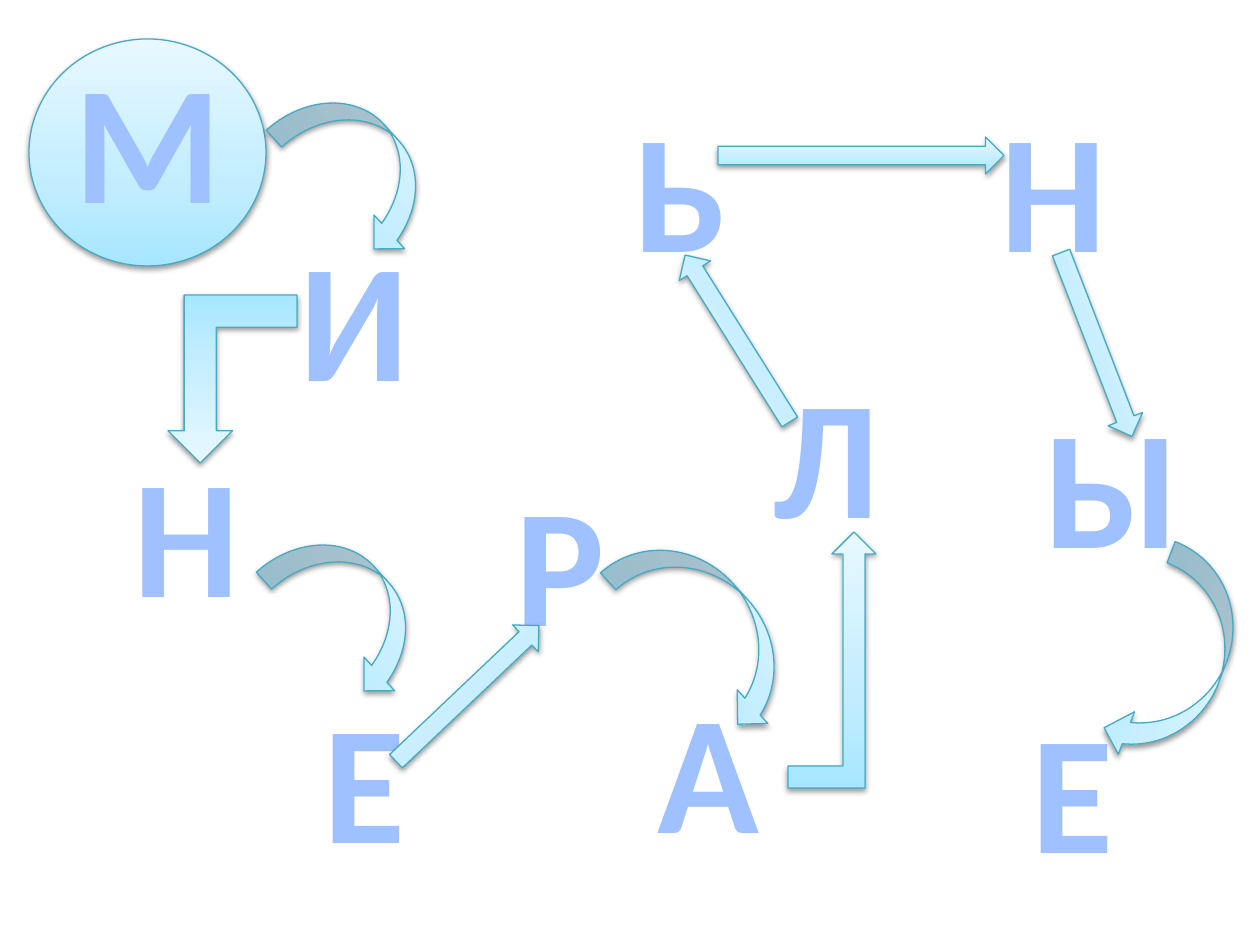
from lxml.etree import SubElement
from pptx import Presentation
from pptx.dml.color import RGBColor
from pptx.enum.shapes import MSO_SHAPE
from pptx.enum.text import MSO_AUTO_SIZE, PP_ALIGN
from pptx.oxml import parse_xml
from pptx.oxml.ns import nsdecls, qn
from pptx.util import Pt

PX = 914400 / 126  # EMU in one px
EDGE = RGBColor(0x46, 0xAA, 0xC5)
LETTER_EDGE = RGBColor(0x46, 0x7A, 0xB8)
PALE = RGBColor(0xBF, 0xD3, 0xF9)
BLUE = RGBColor(0xA0, 0xC1, 0xFF)
NAVY = RGBColor(0x00, 0x3D, 0x85)
AQUA = [(0, RGBColor(0xA7, 0xE6, 0xFF)), (35, RGBColor(0xC1, 0xED, 0xFF)),
        (100, RGBColor(0xE7, 0xF8, 0xFF))]
LETTER_STOPS = [(0, PALE), (9, BLUE), (50, NAVY), (79, BLUE), (100, PALE)]

LETTER_SIZE = (197, 217)
LETTERS = [
    ("М", 49, 29), ("И", 256, 207), ("Н", 88, 423), ("Е", 266, 669),
    ("Р", 462, 452), ("А", 610, 659), ("Л", 728, 344), ("Ь", 581, 78),
    ("Н", 955, 78), ("Ы", 1014, 374), ("Е", 974, 679),
]
CURVED, BENT, STRAIGHT = (MSO_SHAPE.CURVED_DOWN_ARROW, MSO_SHAPE.BENT_UP_ARROW,
                          MSO_SHAPE.RIGHT_ARROW)
CIRCLE = (MSO_SHAPE.OVAL, 29, 39, 237, 227, 0)
ARROWS = [  # kind, left, top, width, height, rotation
    (CURVED, 270, 122, 183, 91, 47.8),
    (CURVED, 260, 564, 183, 91, 47.8),
    (CURVED, 597, 581, 227, 91, 47.8),
    (BENT, 788, 532, 88, 256, 0),
    (BENT, 168, 295, 129, 168, 180),
    (STRAIGHT, 369, 675, 197, 37, 316.5),
    (STRAIGHT, 639, 320, 197, 37, 237.9),
    (STRAIGHT, 718, 137, 286, 37, 0),
    (STRAIGHT, 998, 326, 197, 37, 68.9),
    (CURVED, 1067, 616, 222, 91, 110.9),
]


def gradient(stops, angle):
    """Return a linear gradFill element; stops are (percent, colour)."""
    marks = "".join(f'<a:gs pos="{pos * 1000}"><a:srgbClr val="{colour}"/></a:gs>'
                    for pos, colour in stops)
    return parse_xml(f'<a:gradFill {nsdecls("a")} rotWithShape="1"><a:gsLst>{marks}</a:gsLst>'
                     f'<a:lin ang="{angle * 60000}" scaled="1"/></a:gradFill>')


def add_glossy_shape(slide, kind, left, top, width, height, rotation):
    shape = slide.shapes.add_shape(
        kind, *(round(n * PX) for n in (left, top, width, height)))
    shape.rotation = rotation
    shape.line.color.rgb = EDGE
    shape.line.width = Pt(0.75)
    shape.shadow.inherit = False
    properties = shape._element.spPr
    properties.insert(2, gradient(AQUA, 270))
    shadow = SubElement(properties.find(qn("a:effectLst")), qn("a:outerShdw"),
                        blurRad="40000", dist="20000", dir="5400000", rotWithShape="0")
    shade = SubElement(shadow, qn("a:srgbClr"), val="000000")
    SubElement(shade, qn("a:alpha"), val="38000")


presentation = Presentation()
presentation.slide_width = round(1260 * PX)
presentation.slide_height = round(945 * PX)
slide = presentation.slides.add_slide(presentation.slide_layouts[6])

add_glossy_shape(slide, *CIRCLE)

for letter, left, top in LETTERS:
    box = slide.shapes.add_textbox(*(round(n * PX) for n in (left, top, *LETTER_SIZE)))
    frame = box.text_frame
    frame.word_wrap = True
    frame.auto_size = MSO_AUTO_SIZE.SHAPE_TO_FIT_TEXT
    frame.text = letter
    paragraph = frame.paragraphs[0]
    paragraph.alignment = PP_ALIGN.CENTER
    font = paragraph.runs[0].font
    font.name = "Calibri"
    font.size = Pt(96)
    font.bold = True
    run_properties = paragraph.runs[0]._r.get_or_add_rPr()
    run_properties.insert(0, gradient(LETTER_STOPS, 90))
    run_properties.insert(0, parse_xml(
        f'<a:ln {nsdecls("a")} w="{Pt(0.83)}"><a:solidFill>'
        f'<a:srgbClr val="{LETTER_EDGE}"/></a:solidFill></a:ln>'))

for arrow in ARROWS:
    add_glossy_shape(slide, *arrow)

presentation.save("out.pptx")
